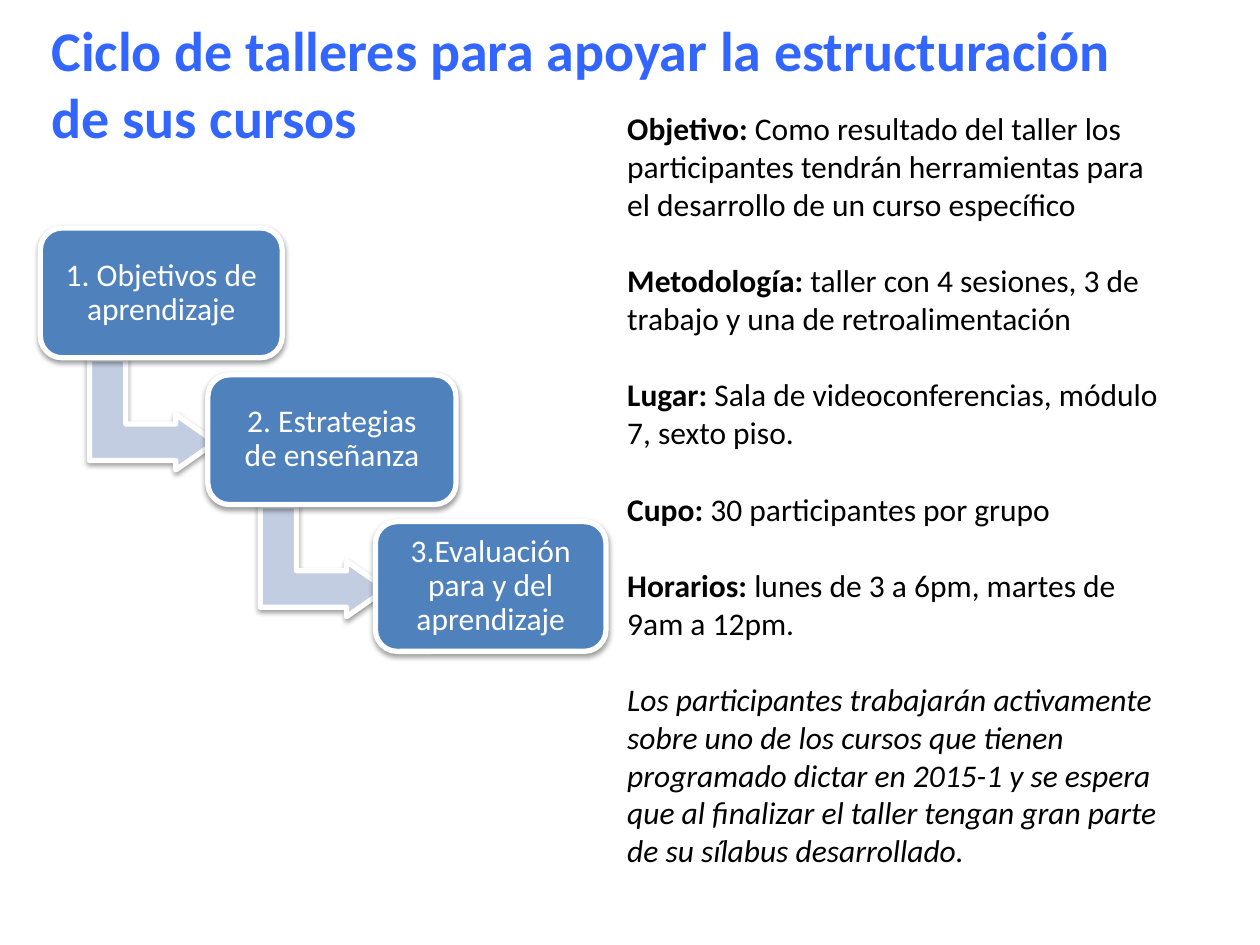
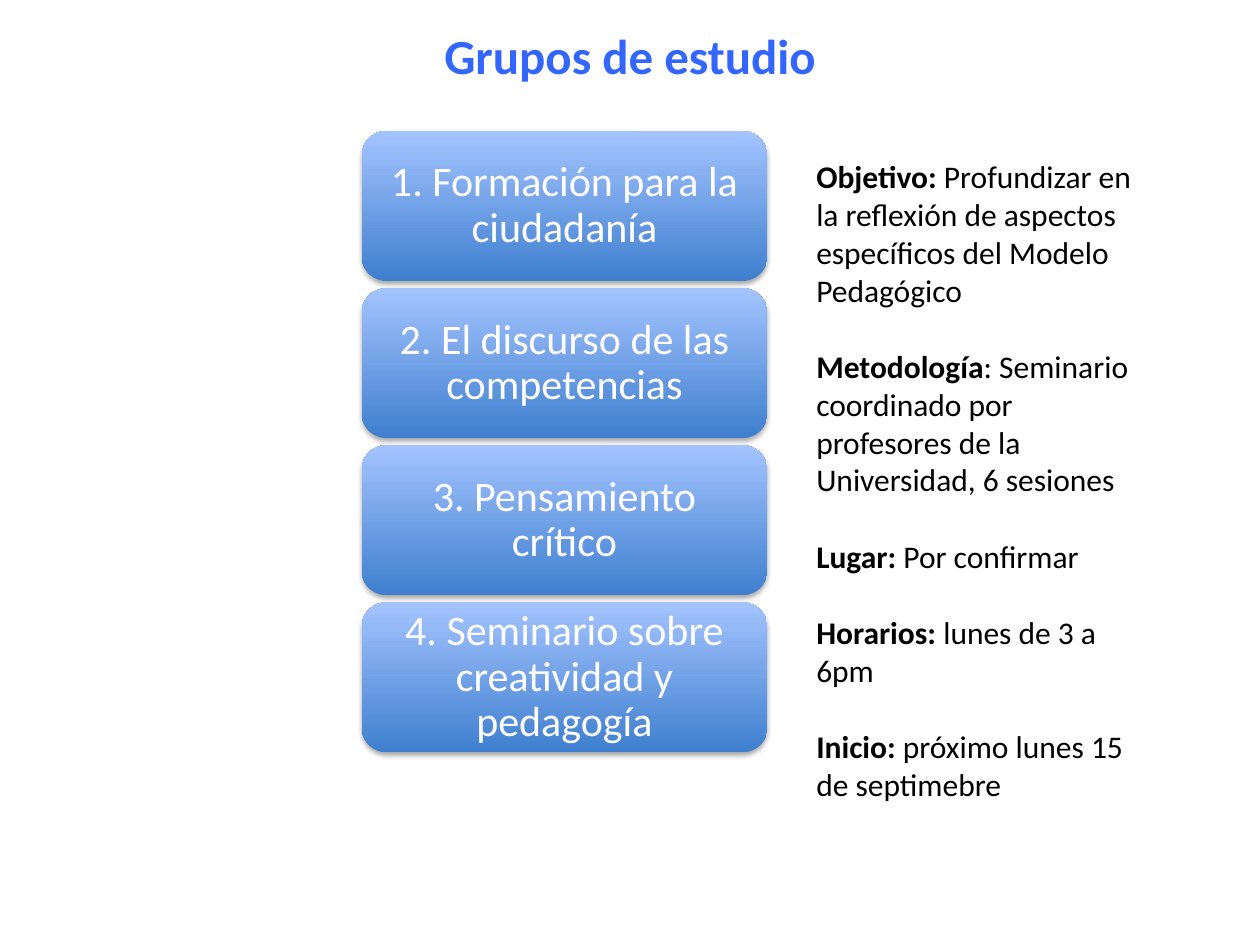
from lxml import etree
from pptx import Presentation
from pptx.dml.color import RGBColor
from pptx.enum import shapes, text
from pptx.oxml import ns
from pptx.util import Inches, Pt

COLUMNS = 100
ROWS = 75
UNIT = Inches(10) / COLUMNS
FONT = "Calibri"
TITLE_BLUE = RGBColor(0x33, 0x66, 0xFF)
STEP_BLUE = RGBColor(0x4F, 0x81, 0xBD)
ARROW_BLUE = RGBColor(0xC2, 0xCD, 0xE1)
GRADIENT = (RGBColor(0x3F, 0x7F, 0xCE), RGBColor(0xA4, 0xC4, 0xFF))
WHITE = RGBColor(0xFF, 0xFF, 0xFF)
BLACK = RGBColor(0x00, 0x00, 0x00)

WORKSHOP_STEPS = [
    ("1. Objetivos de aprendizaje", 19.2),
    ("2. Estrategias de enseñanza", 19.7),
    ("3.Evaluación para y del aprendizaje", 18.3),
]
WORKSHOP_DETAILS = [
    ("Objetivo: ", "Como resultado del taller los participantes tendrán "
     "herramientas para el desarrollo de un curso específico"),
    ("Metodología: ", "taller con 4 sesiones, 3 de trabajo y una de retroalimentación"),
    ("Lugar: ", "Sala de videoconferencias, módulo 7, sexto piso."),
    ("Cupo: ", "30 participantes por grupo"),
    ("Horarios: ", "lunes de 3 a 6pm, martes de 9am a 12pm."),
]
WORKSHOP_NOTE = (
    "Los participantes trabajarán activamente sobre uno de los cursos que tienen "
    "programado dictar en 2015-1 y se espera que al finalizar el taller tengan "
    "gran parte de su sílabus desarrollado."
)
STUDY_GROUPS = [
    "1. Formación para la ciudadanía",
    "2. El discurso de las competencias",
    "3. Pensamiento crítico",
    "4. Seminario sobre creatividad y pedagogía",
]
STUDY_DETAILS = [
    ("Objetivo: ", "Profundizar en la reflexión de aspectos específicos del Modelo Pedagógico"),
    ("Metodología", ": Seminario coordinado por profesores de la Universidad, 6 sesiones"),
    ("Lugar: ", "Por confirmar"),
    ("Horarios: ", "lunes de 3 a 6pm"),
    ("Inicio: ", "próximo lunes 15 de septimebre"),
]


def grid(*lengths):
    return [round(length * UNIT) for length in lengths]


def set_font(paragraph, size, color):
    paragraph.font.name = FONT
    paragraph.font.size = Pt(size)
    paragraph.font.color.rgb = color


def add_text_box(slide, area):
    frame = slide.shapes.add_textbox(*grid(*area)).text_frame
    frame.word_wrap = True
    return frame


def add_title(slide, title, area, size, alignment):
    frame = add_text_box(slide, area)
    frame.vertical_anchor = text.MSO_ANCHOR.MIDDLE
    paragraph = frame.paragraphs[0]
    paragraph.text = title
    paragraph.alignment = alignment
    set_font(paragraph, size, TITLE_BLUE)
    paragraph.font.bold = True


def add_details(slide, area, details, note=None):
    frame = add_text_box(slide, area)
    entries = details + ([("", note)] if note else [])
    for index, (label, description) in enumerate(entries):
        paragraph = frame.add_paragraph() if index else frame.paragraphs[0]
        set_font(paragraph, 18, BLACK)
        if index:
            paragraph.space_before = Pt(22)
        if label:
            paragraph.add_run().text = label
            paragraph.runs[0].font.bold = True
        else:
            paragraph.font.italic = True
        paragraph.add_run().text = description


def add_shadow(shape, distance, opacity):
    shape.shadow.inherit = False
    effects = shape._element.spPr.find(ns.qn("a:effectLst"))
    shadow = etree.SubElement(
        effects, ns.qn("a:outerShdw"), blurRad=str(Pt(3.1)), dist=str(Pt(distance)),
        dir="5400000", rotWithShape="0")
    color = etree.SubElement(shadow, ns.qn("a:srgbClr"), val=str(BLACK))
    etree.SubElement(color, ns.qn("a:alpha"), val=str(opacity * 1000))


def add_outlined_shape(slide, kind, area, color):
    shape = slide.shapes.add_shape(kind, *grid(*area))
    shape.fill.solid()
    shape.fill.fore_color.rgb = color
    shape.line.color.rgb = WHITE
    shape.line.width = Pt(3)
    add_shadow(shape, 1.6, 38)
    return shape


def write_label(shape, label, size, margin):
    frame = shape.text_frame
    frame.word_wrap = True
    frame.vertical_anchor = text.MSO_ANCHOR.MIDDLE
    frame.margin_left, frame.margin_right = grid(margin, margin)
    frame.margin_top = frame.margin_bottom = round(UNIT)
    paragraph = frame.paragraphs[0]
    paragraph.text = label
    paragraph.alignment = text.PP_ALIGN.CENTER
    paragraph.line_spacing = 0.9
    set_font(paragraph, size, WHITE)


def add_bent_arrow(slide, left, top):
    arrow = add_outlined_shape(
        slide, shapes.MSO_SHAPE.BENT_UP_ARROW, (left, top, 8.8, 10), ARROW_BLUE)
    arrow.rotation = 90
    for index, value in enumerate((0.328, 0.25, 0.358)):
        arrow.adjustments[index] = value


def add_staircase(slide, steps):
    for index, (label, width) in enumerate(steps):
        left = 3.2 + index * 13.3
        top = 18.1 + index * 11.65
        if index < len(steps) - 1:
            add_bent_arrow(slide, left + width / 2 - 5.1, top + 9.8)
        step = add_outlined_shape(
            slide, shapes.MSO_SHAPE.ROUNDED_RECTANGLE, (left, top, width, 10.3), STEP_BLUE)
        write_label(step, label, 18, 1.2)


def add_group_stack(slide, groups):
    for index, label in enumerate(groups):
        card = slide.shapes.add_shape(
            shapes.MSO_SHAPE.ROUNDED_RECTANGLE,
            *grid(28.7, 10.4 + index * 12.47, 32.2, 11.9))
        card.fill.gradient()
        card.fill.gradient_angle = 90
        for stop, color in zip(card.fill.gradient_stops, GRADIENT):
            stop.color.rgb = color
        card.line.fill.background()
        add_shadow(card, 1.8, 35)
        write_label(card, label, 24, 1.5)


def main():
    presentation = Presentation()
    presentation.slide_width, presentation.slide_height = grid(COLUMNS, ROWS)
    blank = presentation.slide_layouts[6]

    workshops = presentation.slides.add_slide(blank)
    add_title(workshops, "Ciclo de talleres para apoyar la estructuración de sus cursos",
              (3.1, 2.2, 90, 8.7), 32, text.PP_ALIGN.LEFT)
    add_staircase(workshops, WORKSHOP_STEPS)
    add_details(workshops, (48.8, 8.2, 44.3, 66), WORKSHOP_DETAILS, WORKSHOP_NOTE)

    study = presentation.slides.add_slide(blank)
    add_title(study, "Grupos de estudio", (0, 0, COLUMNS, 8.7), 28, text.PP_ALIGN.CENTER)
    add_group_stack(study, STUDY_GROUPS)
    add_details(study, (63.8, 12, 27.8, 61.6), STUDY_DETAILS)

    presentation.save("out.pptx")


if __name__ == "__main__":
    main()
